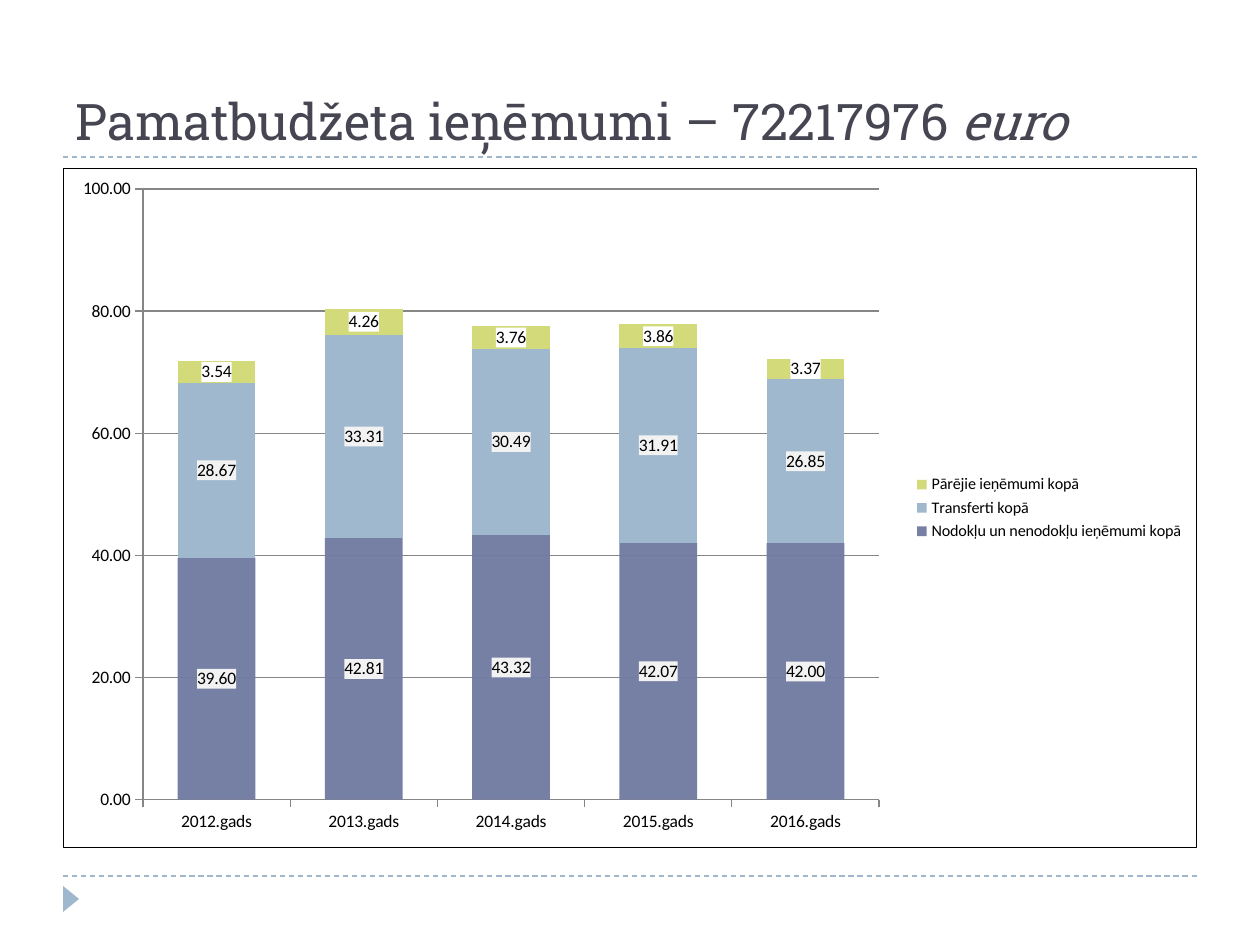
"""Build a slide with a stacked column chart of budget revenue by year."""
from dataclasses import dataclass

from pptx import Presentation
from pptx import util as u
from pptx.chart.data import CategoryChartData
from pptx.dml.color import RGBColor
from pptx.enum import chart as ch, dml, shapes, text
from pptx.oxml import parse_xml
from pptx.oxml.ns import nsdecls, qn

PX = 914400 / 126
INK = RGBColor(0x46, 0x46, 0x53)
BLACK = RGBColor(0, 0, 0)
WHITE = RGBColor(0xFF, 0xFF, 0xFF)
PALE = RGBColor(0xF2, 0xF2, 0xF2)
GREY = RGBColor(0x86, 0x86, 0x86)
INDIGO = RGBColor(0x72, 0x7C, 0xA3)
BLUE = RGBColor(0x9F, 0xB8, 0xCD)
LIME = RGBColor(0xD2, 0xDA, 0x7A)
LEFT, WIDTH = 63, 1134
RULES = (876, 157)
YEARS = [f"{year}.gads" for year in range(2012, 2017)]


@dataclass(frozen=True)
class Revenue:
    name: str
    values: tuple[float, ...]
    color: RGBColor
    label_fill: RGBColor
    alpha: int = 100


REVENUES = (
    Revenue("Nodokļu un nenodokļu ieņēmumi kopā",
            (39.6, 42.81, 43.32, 42.07, 42), INDIGO, PALE, 97),
    Revenue("Transferti kopā", (28.67, 33.31, 30.49, 31.91, 26.85), BLUE, PALE),
    Revenue("Pārējie ieņēmumi kopā", (3.54, 4.26, 3.76, 3.86, 3.37), LIME, WHITE),
)


def px(n: int) -> u.Emu:
    return u.Emu(round(n * PX))


def style_font(font, size: float) -> None:
    font.size, font.name = u.Pt(size), "Calibri"
    font.color.rgb = BLACK


def add_rule(slide, y: int) -> None:
    line = slide.shapes.add_connector(
        shapes.MSO_CONNECTOR.STRAIGHT, px(LEFT), px(y), px(LEFT + WIDTH), px(y))
    line.line.color.rgb = BLUE
    line.line.width = u.Pt(0.75)
    line.line.dash_style = dml.MSO_LINE.DASH
    line._element.spPr.append(parse_xml(f"<a:effectLst {nsdecls('a')}/>"))


def add_marker(slide) -> None:
    sp = slide.shapes.add_shape(
        shapes.MSO_SHAPE.ISOSCELES_TRIANGLE, px(58), px(891), px(26), px(16))
    sp.rotation = 90
    sp.shadow.inherit = False
    sp.fill.solid()
    sp.fill.fore_color.rgb = BLUE
    sp.line.fill.background()


def set_title(slide) -> None:
    sp = slide.shapes.title
    sp.left, sp.top, sp.width, sp.height = px(LEFT), px(21), px(WIDTH), px(136)
    tf = sp.text_frame
    tf.auto_size = text.MSO_AUTO_SIZE.NONE
    tf.vertical_anchor = text.MSO_ANCHOR.BOTTOM
    p = tf.paragraphs[0]
    p.alignment = text.PP_ALIGN.LEFT
    for words, italic in (("Pamatbudžeta ieņēmumi – 72217976 ", False), ("euro", True)):
        r = p.add_run()
        r.text = words
        r.font.size, r.font.name, r.font.italic = u.Pt(28.8), "Roboto Slab", italic
        r.font.color.rgb = INK


def style_series(series, revenue: Revenue) -> None:
    series.format.fill.solid()
    series.format.fill.fore_color.rgb = revenue.color
    series.invert_if_negative = False
    if revenue.alpha < 100:
        color = series._element.find(".//" + qn("a:srgbClr"))
        color.append(parse_xml(f'<a:alpha {nsdecls("a")} val="{revenue.alpha * 1000}"/>'))
    labels = series.data_labels
    labels.show_value = True
    labels.number_format, labels.number_format_is_linked = "0.00", False
    labels.position = ch.XL_LABEL_POSITION.CENTER
    style_font(labels.font, 10)
    series._element.find(qn("c:dLbls")).find(qn("c:txPr")).addprevious(parse_xml(
        f'<c:spPr {nsdecls("c", "a")}><a:solidFill>'
        f'<a:srgbClr val="{revenue.label_fill}"/></a:solidFill></c:spPr>'))


def style_axes(chart) -> None:
    for axis in (chart.category_axis, chart.value_axis):
        axis.major_tick_mark = ch.XL_TICK_MARK.OUTSIDE
        axis.minor_tick_mark = ch.XL_TICK_MARK.NONE
        style_font(axis.tick_labels.font, 10)
        axis.format.line.color.rgb = GREY
        axis.format.line.width = u.Pt(0.75)
    axis = chart.value_axis
    axis.minimum_scale, axis.maximum_scale, axis.major_unit = 0, 100, 20
    axis.tick_labels.number_format = "0.00"
    axis.tick_labels.number_format_is_linked = False
    axis.has_major_gridlines = True
    axis.major_gridlines.format.line.color.rgb = GREY
    axis.major_gridlines.format.line.width = u.Pt(0.75)


def frame_chart(chart) -> None:
    space = chart._chartSpace
    space.find(qn("c:chart")).addnext(parse_xml(
        f'<c:spPr {nsdecls("c", "a")}><a:noFill/><a:ln w="9525"><a:solidFill>'
        f'<a:srgbClr val="{BLACK}"/></a:solidFill></a:ln></c:spPr>'))
    area = space.find(".//" + qn("c:plotArea"))
    for old in area.findall(qn("c:layout")):
        area.remove(old)
    bounds = "".join(f'<c:{key} val="{value}"/>' for key, value in (
        ("layoutTarget", "inner"), ("xMode", "edge"), ("yMode", "edge"),
        ("x", 0.07), ("y", 0.03), ("w", 0.65), ("h", 0.9)))
    area.insert(0, parse_xml(
        f'<c:layout {nsdecls("c")}><c:manualLayout>{bounds}</c:manualLayout></c:layout>'))


def add_revenue_chart(slide) -> None:
    data = CategoryChartData(number_format="0.00")
    data.categories = YEARS
    for revenue in REVENUES:
        data.add_series(revenue.name, revenue.values)
    chart = slide.shapes.add_chart(
        ch.XL_CHART_TYPE.COLUMN_STACKED, px(LEFT), px(168), px(WIDTH), px(680), data).chart
    style_font(chart.font, 10)
    chart.has_title = False
    chart.has_legend = True
    chart.legend.position = ch.XL_LEGEND_POSITION.RIGHT
    chart.legend.include_in_layout = False
    style_font(chart.legend.font, 9.2)
    plot = chart.plots[0]
    plot.gap_width, plot.overlap, plot.vary_by_categories = 89, 100, False
    for series, revenue in zip(plot.series, REVENUES):
        style_series(series, revenue)
    style_axes(chart)
    frame_chart(chart)


def main() -> None:
    prs = Presentation()
    prs.slide_width, prs.slide_height = px(1260), px(945)
    slide = prs.slides.add_slide(prs.slide_layouts[5])
    for y in RULES:
        add_rule(slide, y)
    add_marker(slide)
    set_title(slide)
    add_revenue_chart(slide)
    prs.save("out.pptx")


if __name__ == "__main__":
    main()
